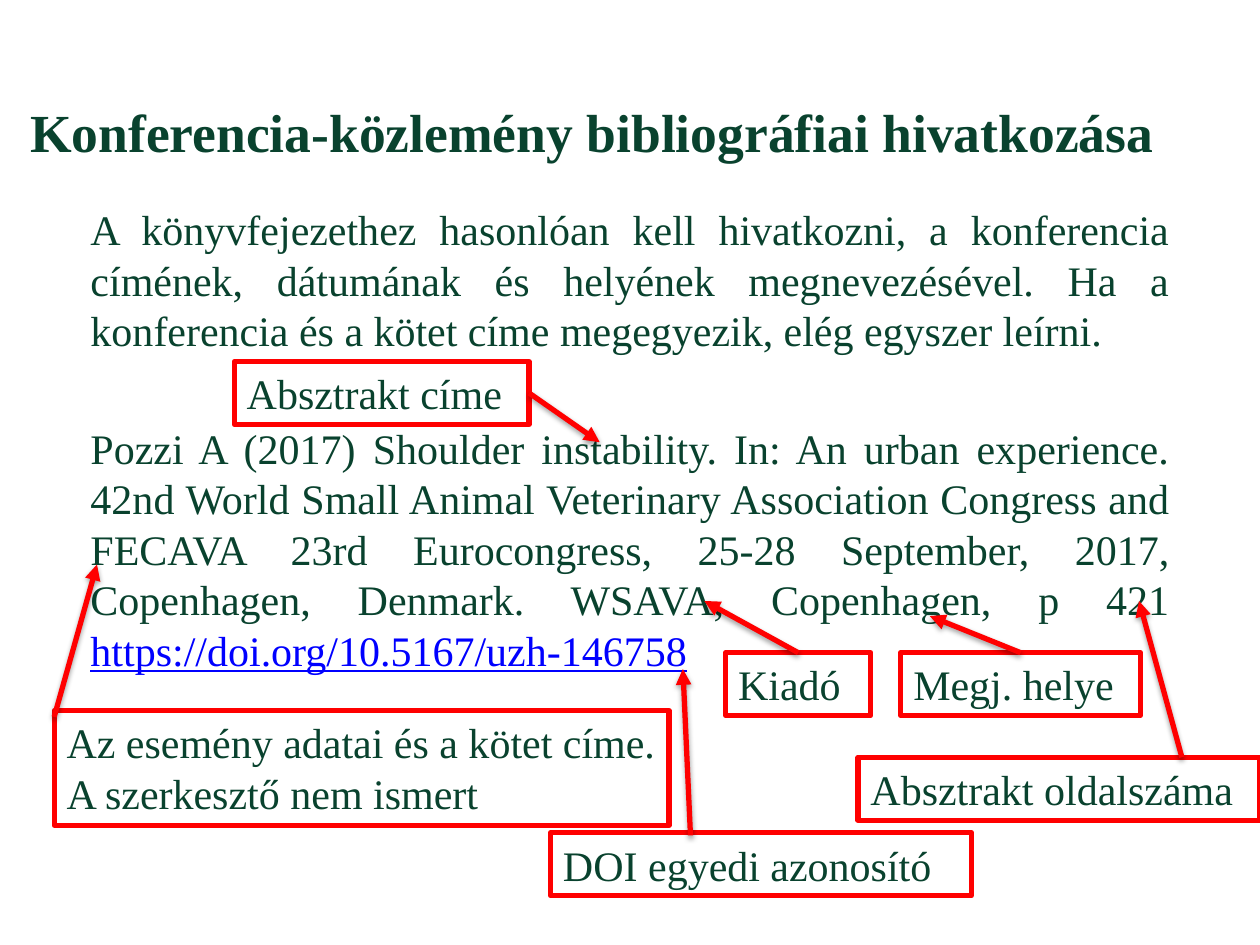
from lxml import etree
from pptx import Presentation
from pptx.dml.color import RGBColor
from pptx.enum.shapes import MSO_CONNECTOR
from pptx.enum.text import MSO_ANCHOR, PP_ALIGN
from pptx.oxml import parse_xml
from pptx.oxml.ns import nsdecls, qn
from pptx.util import Inches, Pt

COLORS = {"text": "09422E", "mark": "FF0000", "link": "0000FF", "shadow": "000000"}
FONT = "Times New Roman"
TOP, RIGHT = 0, 3  # connection sites of a rectangle

TITLE = "Konferencia-közlemény bibliográfiai hivatkozása"
RULE = ("A könyvfejezethez hasonlóan kell hivatkozni, a konferencia címének, "
        "dátumának és helyének megnevezésével. Ha a konferencia és a kötet címe "
        "megegyezik, elég egyszer leírni.")
CITATION = ("Pozzi A (2017) Shoulder instability. In: An urban experience. 42nd World "
            "Small Animal Veterinary Association Congress and FECAVA 23rd Eurocongress, "
            "25-28 September, 2017, Copenhagen, Denmark. WSAVA, Copenhagen, p 421 ")
DOI = "https://doi.org/10.5167/uzh-146758"

# Lines, box, arrow start as an offset in the box, arrow tip, joined site
CALLOUTS = [
    (["Absztrakt címe"], (1.86, 2.87, 2.34, 0.5), (2.34, 0.25), (4.76, 3.51), RIGHT),
    (["Kiadó"], (5.76, 5.18, 1.15, 0.5), (0.57, 0), (5.59, 4.77), TOP),
    (["Megj. helye"], (7.15, 5.18, 1.9, 0.5), (0.95, 0), (7.38, 4.89), TOP),
    (["Absztrakt oldalszáma"], (6.81, 6.01, 3.19, 0.5), (2.57, 0), (9.04, 4.77), None),
    (["Az esemény adatai és a kötet címe.", "A szerkesztő nem ismert"],
     (0.43, 5.64, 4.88, 0.91), (0, 0.05), (0.77, 4.48), None),
    (["DOI egyedi azonosító"], (4.37, 6.61, 3.34, 0.5), (1.11, 0.02), (5.42, 5.31), None),
]


def color(name):
    return RGBColor.from_string(COLORS[name])


def style(paragraph, size=24, bold=False):
    font = paragraph.font
    font.name, font.size, font.bold = FONT, Pt(size), bold
    font.color.rgb = color("text")


def add_text(slide, box, lines, size=24, bold=False):
    textbox = slide.shapes.add_textbox(*map(Inches, box))
    frame = textbox.text_frame
    frame.word_wrap = True
    frame.text = "\n".join(lines)
    for paragraph in frame.paragraphs:
        style(paragraph, size, bold)
    return textbox


def add_title(slide, box):
    title = add_text(slide, box, [TITLE], 30.6, True)
    title.text_frame.vertical_anchor = MSO_ANCHOR.MIDDLE


def add_body(slide, box):
    body = add_text(slide, box, [RULE, CITATION])
    rule, citation = body.text_frame.paragraphs
    rule.alignment = citation.alignment = PP_ALIGN.JUSTIFY
    citation.space_before = Pt(38.5)
    doi = citation.add_run()
    doi.text = DOI
    doi.font.underline = True
    doi.font.color.rgb = color("link")


def mark_line(shape):
    shape.line.color.rgb = color("mark")
    shape.line.width = Pt(3)


def add_arrow(slide, start, tip):
    arrow = slide.shapes.add_connector(MSO_CONNECTOR.STRAIGHT,
                                       *map(Inches, (*start, *tip)))
    mark_line(arrow)
    etree.SubElement(arrow.line._get_or_add_ln(), qn("a:tailEnd"), type="triangle")
    # Soft shadow straight below the line
    arrow._element.spPr.append(parse_xml(
        f'<a:effectLst {nsdecls("a")}>'
        f'<a:outerShdw blurRad="{Pt(3.1)}" dist="{Pt(1.6)}" dir="5400000" rotWithShape="0">'
        f'<a:srgbClr val="{COLORS["shadow"]}"><a:alpha val="38000"/></a:srgbClr>'
        '</a:outerShdw></a:effectLst>'))
    return arrow


def add_callout(slide, box, lines, offset, tip, site):
    label = add_text(slide, box, lines)
    label.text_frame.margin_right = Inches(0.05)
    mark_line(label)
    start = (box[0] + offset[0], box[1] + offset[1])
    arrow = add_arrow(slide, start, tip)
    if site is not None:
        arrow.begin_connect(label, site)


def main():
    prs = Presentation()
    prs.slide_width, prs.slide_height = Inches(10), Inches(7.5)
    slide = prs.slides.add_slide(prs.slide_layouts[6])
    add_body(slide, (0.62, 1.57, 8.76, 5.1))
    add_title(slide, (0.14, 0.58, 9.53, 0.92))
    for lines, box, offset, tip, site in CALLOUTS:
        add_callout(slide, box, lines, offset, tip, site)
    prs.save("out.pptx")


if __name__ == "__main__":
    main()
